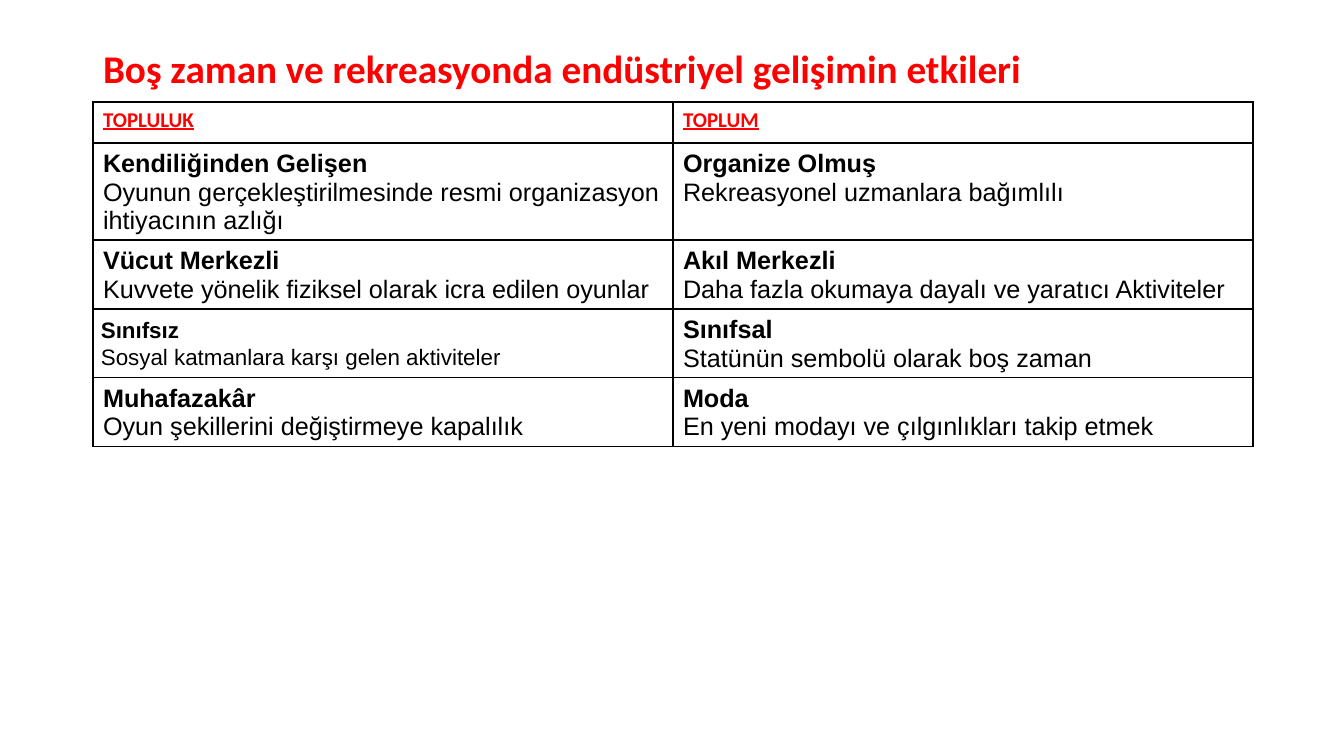
from dataclasses import dataclass

from lxml import etree
from pptx import Presentation
from pptx import util as u
from pptx.dml.color import RGBColor
from pptx.enum import text
from pptx.oxml import ns

PX = 914400 / 100.8
COLORS = {"accent": "FF0000", "ink": "000000"}
LEFT, TITLE_TOP, TABLE_TOP = 93, 40, 102
TITLE_HEIGHT, COLUMN_WIDTH = 62, 580
ROW_HEIGHTS = [41, 97, 69, 68, 69]


@dataclass
class Entry:
    heading: str
    detail: str
    size: int = 18
    insets: tuple[int, int, int, int] | None = None  # left, top, right, bottom
    detail_spacing: float = 1.0
    space_after: float = 0


HEADERS = ["TOPLULUK", "TOPLUM"]
ROWS = [
    (Entry("Kendiliğinden Gelişen",
           "Oyunun gerçekleştirilmesinde resmi organizasyon ihtiyacının azlığı"),
     Entry("Organize Olmuş", "Rekreasyonel uzmanlara bağımlılı", space_after=0.5)),
    (Entry("Vücut Merkezli", "Kuvvete yönelik fiziksel olarak icra edilen oyunlar"),
     Entry("Akıl Merkezli", "Daha fazla okumaya dayalı ve yaratıcı Aktiviteler")),
    (Entry("Sınıfsız", "Sosyal katmanlara karşı gelen aktiviteler", 16, (8, 8, 3, 0), 1.07),
     Entry("Sınıfsal", "Statünün sembolü olarak boş zaman")),
    (Entry("Muhafazakâr", "Oyun şekillerini değiştirmeye kapalılık"),
     Entry("Moda", "En yeni modayı ve çılgınlıkları takip etmek")),
]


def px(length: int) -> u.Emu:
    return u.Emu(round(length * PX))


def write(para, words: str, size: int, font: str, color: str, bold: bool) -> None:
    para.text = words
    para.font.size = u.Pt(size)
    para.font.name = font
    para.font.bold = bold
    para.font.color.rgb = RGBColor.from_string(COLORS[color])


def outline(cell) -> None:
    """Clear the cell's fill and rule all four sides."""
    cell.fill.background()
    properties = cell._tc.get_or_add_tcPr()
    for index, side in enumerate(("lnL", "lnR", "lnT", "lnB")):
        line = etree.Element(ns.qn(f"a:{side}"), w=str(u.Pt(1)))
        fill = etree.SubElement(line, ns.qn("a:solidFill"))
        etree.SubElement(fill, ns.qn("a:srgbClr"), val=COLORS["ink"])
        properties.insert(index, line)


def fill_entry(cell, entry: Entry) -> None:
    if entry.insets:
        (cell.margin_left, cell.margin_top,
         cell.margin_right, cell.margin_bottom) = map(px, entry.insets)
    heading = cell.text_frame.paragraphs[0]
    write(heading, entry.heading, entry.size, "Arial", "ink", True)
    heading.line_spacing = 1.07
    heading.space_after = u.Pt(entry.space_after)
    detail = cell.text_frame.add_paragraph()
    write(detail, entry.detail, entry.size, "Arial", "ink", False)
    detail.line_spacing = entry.detail_spacing


def add_title(page) -> None:
    title = page.shapes.title
    title.left, title.top = px(LEFT), px(TITLE_TOP)
    title.width, title.height = px(2 * COLUMN_WIDTH), px(TITLE_HEIGHT)
    frame = title.text_frame
    frame.auto_size = text.MSO_AUTO_SIZE.NONE
    frame.vertical_anchor = text.MSO_ANCHOR.MIDDLE
    para = frame.paragraphs[0]
    write(para, "Boş zaman ve rekreasyonda endüstriyel gelişimin etkileri",
          28, "Calibri", "accent", True)
    para.alignment = text.PP_ALIGN.LEFT
    para.line_spacing = 0.9


def add_comparison(page) -> None:
    table = page.shapes.add_table(
        len(ROW_HEIGHTS), len(HEADERS), px(LEFT), px(TABLE_TOP),
        px(2 * COLUMN_WIDTH), px(sum(ROW_HEIGHTS))).table
    table.first_row = table.horz_banding = False
    for row, height in zip(table.rows, ROW_HEIGHTS):
        row.height = px(height)
    for cell in table.iter_cells():
        outline(cell)

    # Header row
    for column, header in enumerate(HEADERS):
        para = table.cell(0, column).text_frame.paragraphs[0]
        write(para, header, 15, "Calibri", "accent", True)
        para.font.underline = True

    # Contrasting pairs
    for row, pair in enumerate(ROWS, start=1):
        for column, entry in enumerate(pair):
            fill_entry(table.cell(row, column), entry)


def main() -> None:
    deck = Presentation()
    deck.slide_width, deck.slide_height = px(1344), px(756)
    page = deck.slides.add_slide(deck.slide_layouts[5])
    add_title(page)
    add_comparison(page)
    deck.save("out.pptx")


if __name__ == "__main__":
    main()
